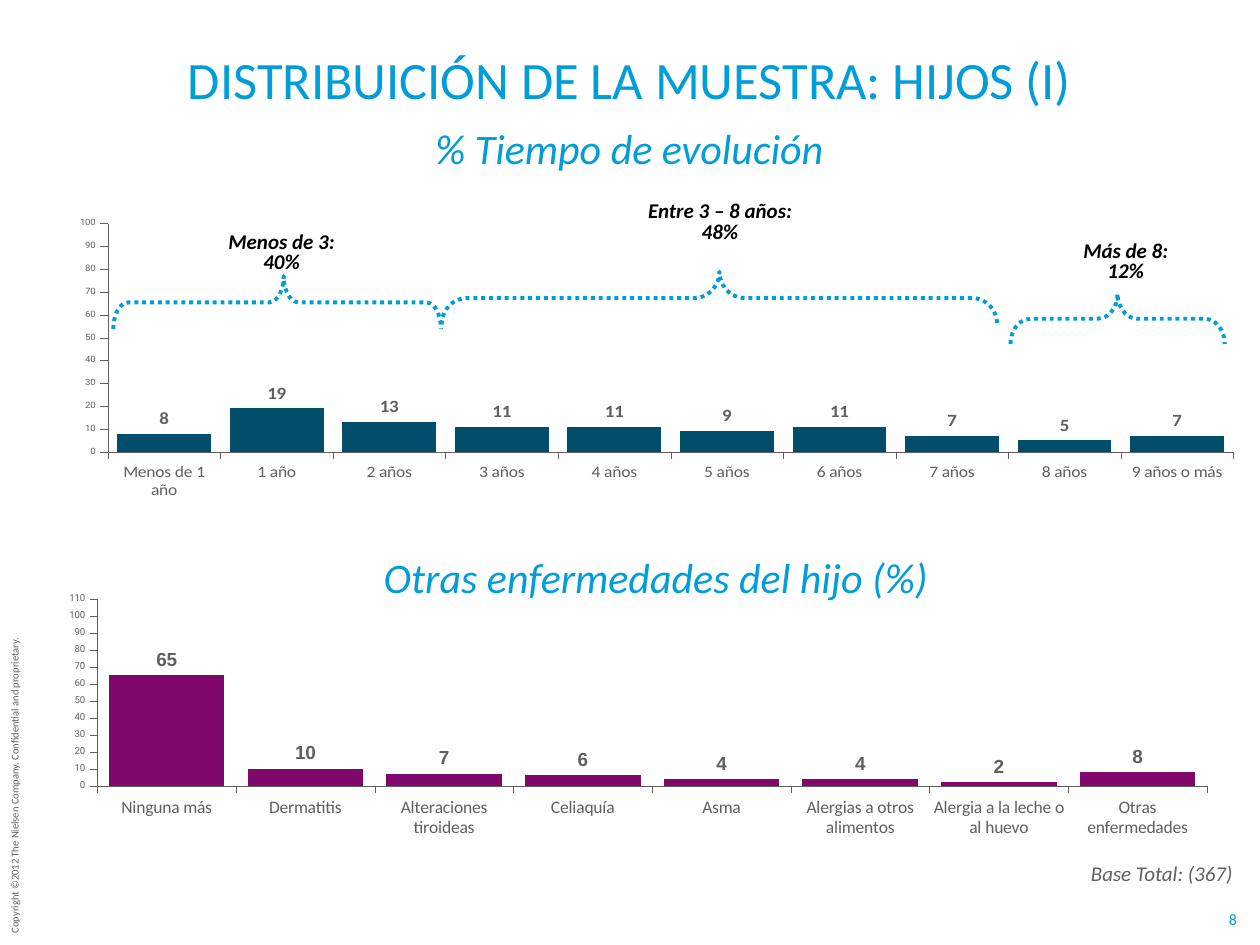
from lxml import etree
from pptx import Presentation
from pptx.chart.data import CategoryChartData as ChartData
from pptx.dml.color import RGBColor
from pptx.enum.chart import XL_CHART_TYPE as Kind, XL_LABEL_POSITION as Place, XL_TICK_MARK as Tick
from pptx.enum.dml import MSO_LINE as Dash
from pptx.enum.shapes import MSO_SHAPE as Shape
from pptx.enum.text import MSO_ANCHOR as Anchor, MSO_AUTO_SIZE as Fit, PP_ALIGN as Align
from pptx.oxml.ns import qn
from pptx.util import Inches, Pt

BLUE = RGBColor(0x00, 0x9D, 0xD9)
TEAL = RGBColor(0x00, 0x4E, 0x6C)
PLUM = RGBColor(0x80, 0x07, 0x6B)
GREY = RGBColor(0x5F, 0x5F, 0x5F)
BLACK = RGBColor(0x00, 0x00, 0x00)
WHITE = RGBColor(0xFF, 0xFF, 0xFF)

YEARS = {"Menos de 1 año": 8, "1 año": 19, "2 años": 13, "3 años": 11, "4 años": 11,
         "5 años": 9, "6 años": 11, "7 años": 7, "8 años": 5, "9 años o más": 7}
ILLS = {"Ninguna más": 65, "Dermatitis": 10, "Alteraciones tiroideas": 7, "Celiaquía": 6,
        "Asma": 4, "Alergias a otros alimentos": 4, "Alergia a la leche o al huevo": 2,
        "Otras enfermedades": 8}
# text, left, top
NOTES = [("Menos de 3:\n40%", 1.6, 1.85),
         ("Entre 3 – 8 años:\n48%", 5.08, 1.61),
         ("Más de 8:\n12%", 8.3, 1.92)]
# left, top, width, height before turning, then curve and tip
BRACES = [(1.99, 1.1, 0.42, 2.6, 0.28, 0.52),
          (5.5, 0.16, 0.42, 4.41, 0.48, 0.5),
          (8.67, 1.68, 0.4, 1.7, 0.4, 0.5)]


def set_font(font, size, color, name="Calibri", bold=False, italic=False):
    font.name, font.size, font.bold, font.italic = name, Pt(size), bold, italic
    font.color.rgb = color


def fill_text(frame, text, size, color, align=Align.LEFT, gap=None, **style):
    frame.text = text
    for para in frame.paragraphs:
        para.alignment = align
        para.line_spacing = gap
        for run in para.runs:
            set_font(run.font, size, color, **style)


def clear_insets(frame):
    frame.margin_left = frame.margin_right = frame.margin_top = frame.margin_bottom = 0


def add_text(slide, box, text, size, color, align=Align.LEFT, wrap=True, **style):
    shape = slide.shapes.add_textbox(*map(Inches, box))
    frame = shape.text_frame
    frame.word_wrap = wrap
    frame.auto_size = Fit.SHAPE_TO_FIT_TEXT
    fill_text(frame, text, size, color, align, **style)
    return shape


def add_note(slide, text, left, top):
    box = slide.shapes.add_shape(Shape.RECTANGLE, *map(Inches, (left, top, 1.27, 0.33)))
    box.shadow.inherit = False
    box.fill.solid()
    box.fill.fore_color.rgb = WHITE
    box.line.fill.background()
    frame = box.text_frame
    frame.word_wrap = True
    frame.vertical_anchor = Anchor.TOP
    clear_insets(frame)
    fill_text(frame, text, 12, BLACK, Align.CENTER, 0.8, bold=True, italic=True)


def add_brace(slide, left, top, width, height, curve, tip):
    brace = slide.shapes.add_shape(Shape.RIGHT_BRACE, *map(Inches, (left, top, width, height)))
    brace.rotation = 270
    brace.adjustments[0], brace.adjustments[1] = curve, tip
    brace.shadow.inherit = False
    brace.fill.background()
    brace.line.color.rgb = BLUE
    brace.line.width = Pt(2.25)
    brace.line.dash_style = Dash.ROUND_DOT


def place_plot(chart, box):
    """Fix the inner plot area, in fractions of the chart."""
    area = chart.plots[0]._element.getparent()
    for old in area.findall(qn("c:layout")):
        area.remove(old)
    layout = etree.Element(qn("c:layout"))
    area.insert(0, layout)
    manual = etree.SubElement(layout, qn("c:manualLayout"))
    pairs = [("layoutTarget", "inner"), ("xMode", "edge"), ("yMode", "edge"), *zip("xywh", box)]
    for tag, val in pairs:
        etree.SubElement(manual, qn(f"c:{tag}")).set("val", str(val))


def style_axis(axis, size, name):
    axis.has_major_gridlines = False
    axis.major_tick_mark, axis.minor_tick_mark = Tick.OUTSIDE, Tick.NONE
    axis.format.line.color.rgb = GREY
    axis.format.line.width = Pt(0.15)
    set_font(axis.tick_labels.font, size, GREY, name)


def add_bars(slide, box, data, color, top, plot_box, label_font):
    source = ChartData(number_format="#,##0")
    source.categories = list(data)
    source.add_series("Series 1", list(data.values()))
    chart = slide.shapes.add_chart(Kind.COLUMN_CLUSTERED, *map(Inches, box), source).chart
    chart.has_legend = chart.has_title = False
    set_font(chart.font, 10.8, GREY, "Arial", bold=True)

    style_axis(chart.category_axis, 10, "Calibri")
    axis = chart.value_axis
    style_axis(axis, 5.5, "Roboto")
    axis.minimum_scale, axis.maximum_scale, axis.major_unit = 0, top, 10

    plot = chart.plots[0]
    plot.gap_width = 20
    plot.vary_by_categories = False
    bars = plot.series[0].format.fill
    bars.solid()
    bars.fore_color.rgb = color
    plot.has_data_labels = True
    labels = plot.data_labels
    labels.show_value = True
    labels.position = Place.OUTSIDE_END
    labels.number_format, labels.number_format_is_linked = "#,##0", False
    set_font(labels.font, 10.8, GREY, label_font, bold=True)
    place_plot(chart, plot_box)


def add_frame(slide):
    """Title, copyright line and page number."""
    side = add_text(slide, (-1.18, 6.11, 2.59, 0.2),
                    "Copyright ©2012 The Nielsen Company. Confidential and proprietary.",
                    6, GREY, wrap=False)
    side.rotation = 270
    page = add_text(slide, (9.71, 7.22, 0.15, 0.15), "8", 9, BLUE, Align.CENTER, wrap=False)
    clear_insets(page.text_frame)
    page.text_frame.vertical_anchor = Anchor.MIDDLE
    title = add_text(slide, (1, 0.25, 8, 0.62), "DISTRIBUICIÓN DE LA MUESTRA: HIJOS (I)",
                     30, BLUE, Align.CENTER).text_frame
    title.auto_size = Fit.NONE
    title.margin_top = title.margin_bottom = 0
    title.vertical_anchor = Anchor.BOTTOM


def main():
    deck = Presentation()
    deck.slide_width, deck.slide_height = Inches(10), Inches(7.5)
    slide = deck.slides.add_slide(deck.slide_layouts[6])

    add_frame(slide)
    add_bars(slide, (0.5, 4.64, 9.08, 2.28), ILLS, PLUM, 110, (0.03, 0.05, 0.97, 0.65), "Arial")
    add_bars(slide, (0.58, 1.67, 9.21, 2.29), YEARS, TEAL, 100, (0.03, 0.05, 0.97, 0.87), "Calibri")
    add_text(slide, (1.58, 0.92, 6.83, 0.5), "% Tiempo de evolución",
             24, BLUE, Align.CENTER, italic=True)
    for note in NOTES:
        add_note(slide, *note)
    for brace in BRACES:
        add_brace(slide, *brace)
    add_text(slide, (2.33, 4.33, 5.75, 0.5), "Otras enfermedades del hijo (%)",
             24, BLUE, Align.CENTER, italic=True)
    add_text(slide, (8.56, 6.78, 1.33, 0.3), "Base Total: (367)", 12, GREY, italic=True)

    deck.save("out.pptx")


if __name__ == "__main__":
    main()
